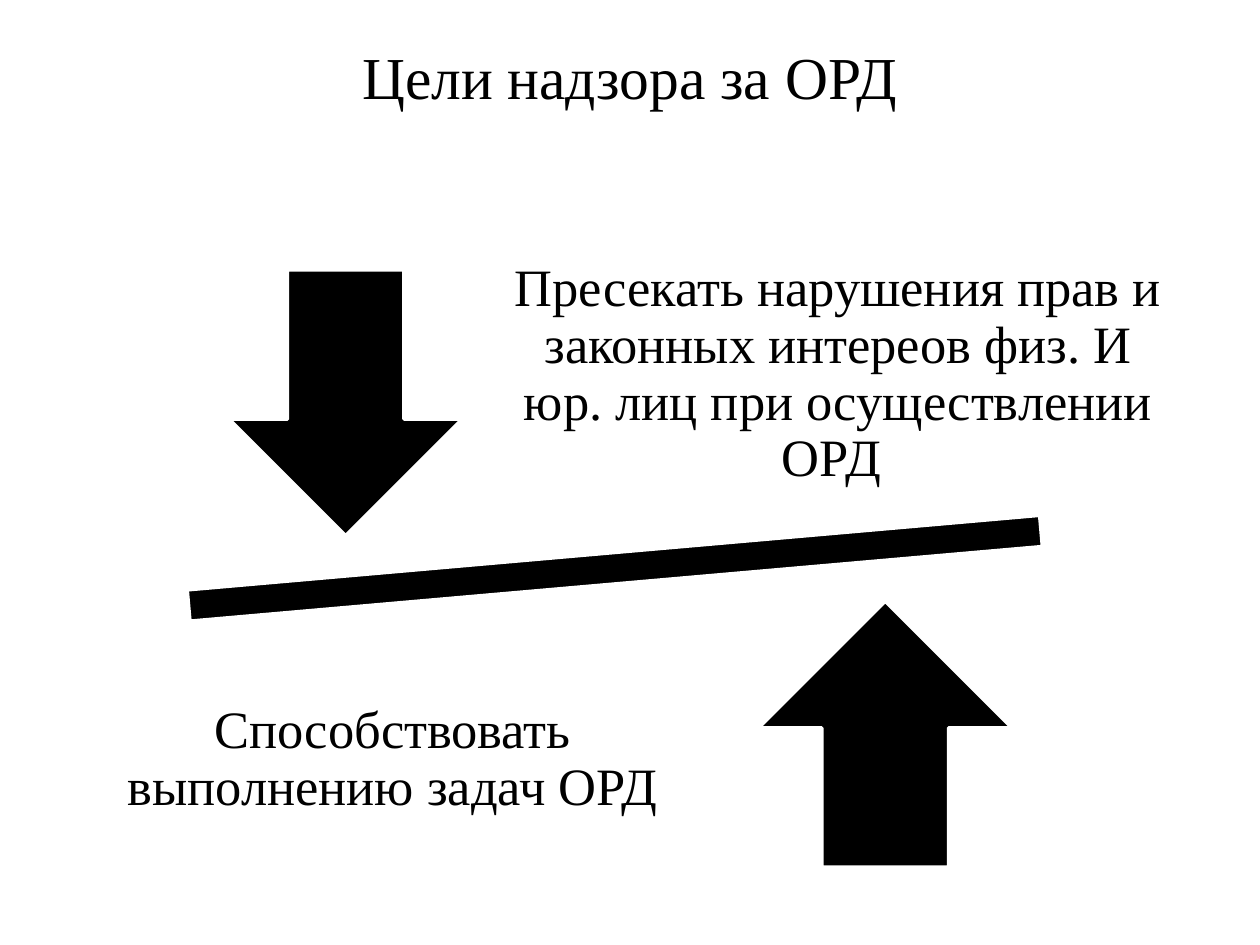
from dataclasses import dataclass

from pptx import Presentation
from pptx.dml.color import RGBColor
from pptx.enum.shapes import MSO_SHAPE as Shape
from pptx.enum.text import MSO_ANCHOR as Anchor, PP_ALIGN as Align
from pptx.util import Cm, Pt


@dataclass(frozen=True)
class Theme:
    font: str = "Times New Roman"
    ink: RGBColor = RGBColor(0, 0, 0)
    paper: RGBColor = RGBColor(255, 255, 255)
    title_size: int = 34
    label_size: int = 30
    outline: int = 2
    label_inset: float = 0.58


THEME = Theme()
TITLE_ONLY = 5

# Boxes are left, top, width, height in centimetres
TITLE_BOX = (1.27, 0.76, 22.86, 1.55)
BALANCE_BOX = (0.66, 4.75, 23.6, 13.38)


def place(shape, box):
    shape.left, shape.top, shape.width, shape.height = map(Cm, box)


def write_centred(text_frame, text, size):
    text_frame.word_wrap = True
    text_frame.vertical_anchor = Anchor.MIDDLE
    paragraph = text_frame.paragraphs[0]
    paragraph.text = text
    paragraph.alignment = Align.CENTER
    for run in paragraph.runs:
        run.font.name = THEME.font
        run.font.size = Pt(size)
        run.font.color.rgb = THEME.ink
    return paragraph


def add_figure(shapes, kind, box, rotation=0):
    figure = shapes.add_shape(kind, *map(Cm, box))
    figure.rotation = rotation
    figure.shadow.inherit = False
    figure.fill.solid()
    figure.fill.fore_color.rgb = THEME.ink
    figure.line.color.rgb = THEME.paper
    figure.line.width = Pt(THEME.outline)


def add_label(shapes, text, box):
    text_frame = shapes.add_textbox(*map(Cm, box)).text_frame
    for side in ("left", "top", "right", "bottom"):
        setattr(text_frame, f"margin_{side}", Cm(THEME.label_inset))
    paragraph = write_centred(text_frame, text, THEME.label_size)
    paragraph.line_spacing = 0.9


def fill_title(slide, box):
    title = slide.shapes.title
    place(title, box)
    write_centred(title.text_frame, "Цели надзора за ОРД", THEME.title_size)


def add_balance(slide, box):
    """Tilted beam with an opposing arrow and a label on each side."""
    left, top, width, height = box
    shapes = slide.shapes.add_group_shape().shapes

    def inside(x, y, part_width, part_height):
        return left + x, top + y, part_width, part_height

    arrow_height, label_height = 5.36, 5.61

    # Beam
    add_figure(shapes, Shape.MATH_MINUS, inside(0, 5.36, 23.47, 2.69), rotation=355)

    # Upper half: arrow down, label at the right edge
    add_figure(shapes, Shape.DOWN_ARROW, inside(3.96, 0.69, 4.7, arrow_height))
    add_label(
        shapes,
        "Пресекать нарушения прав и законных интереов физ. И юр. лиц при осуществлении ОРД ",
        inside(width - 14.73, 0, 14.73, label_height),
    )

    # Lower half: arrow up, label at the bottom edge
    add_figure(shapes, Shape.UP_ARROW, inside(14.63, 7.37, 5.11, arrow_height))
    add_label(
        shapes,
        "Способствовать выполнению задач ОРД",
        inside(0.53, height - label_height, 13.46, label_height),
    )


def main():
    presentation = Presentation()
    presentation.slide_width, presentation.slide_height = Cm(25.4), Cm(19.05)
    slide = presentation.slides.add_slide(presentation.slide_layouts[TITLE_ONLY])
    fill_title(slide, TITLE_BOX)
    add_balance(slide, BALANCE_BOX)
    presentation.save("out.pptx")


if __name__ == "__main__":
    main()
